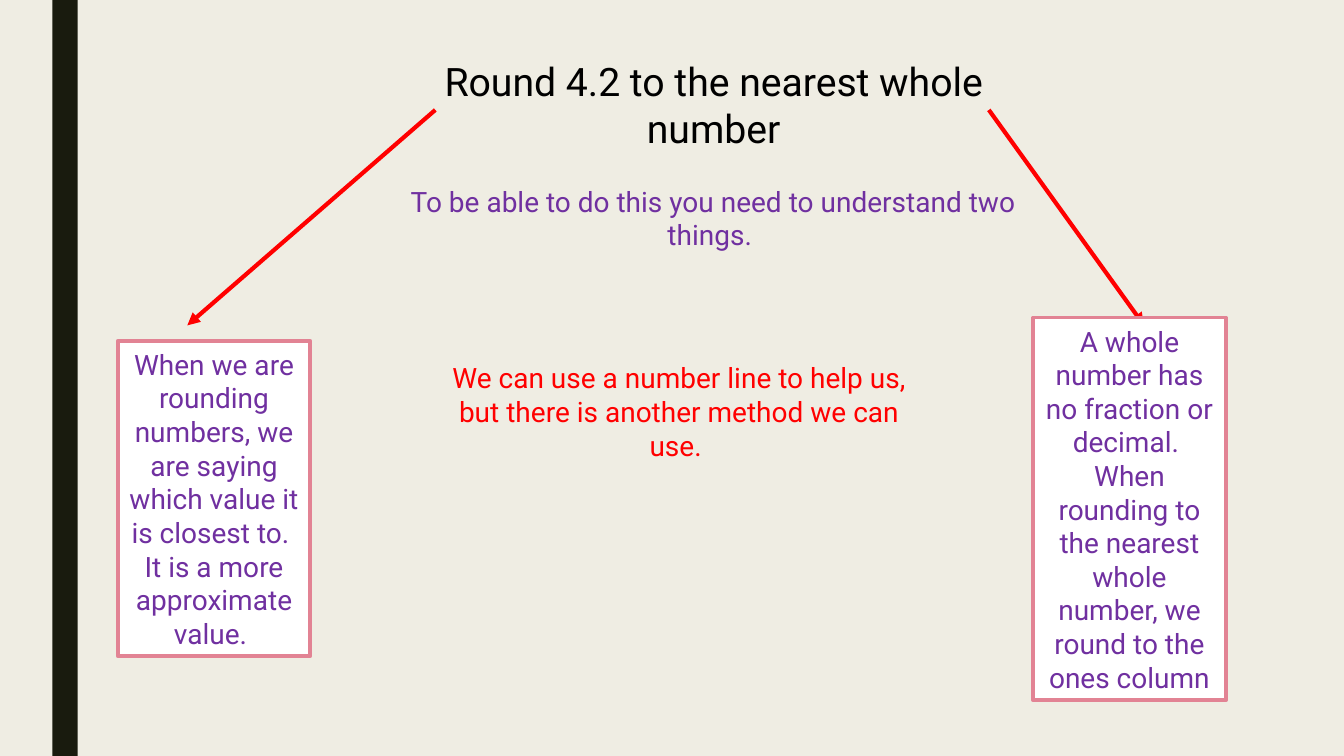
from lxml.etree import SubElement
from pptx import Presentation
from pptx.dml.color import RGBColor
from pptx.enum.shapes import MSO_CONNECTOR as Connector, MSO_SHAPE as Shape
from pptx.enum.text import MSO_ANCHOR as Anchor, PP_ALIGN as Align
from pptx.oxml.ns import qn
from pptx.util import Cm, Pt

CREAM = RGBColor(0xEF, 0xED, 0xE3)
DARK_OLIVE = RGBColor(0x19, 0x1B, 0x0E)
BLACK = RGBColor(0, 0, 0)
WHITE = RGBColor(0xFF, 0xFF, 0xFF)
PURPLE = RGBColor(0x70, 0x30, 0xA0)
RED = RGBColor(0xFF, 0, 0)
PINK = RGBColor(0xE2, 0x83, 0x94)


def write_text(shape, *paragraphs, size=20, color=PURPLE, anchor=Anchor.TOP):
    frame = shape.text_frame
    frame.word_wrap = True
    frame.vertical_anchor = anchor
    frame.text = "\n".join(paragraphs)
    for paragraph in frame.paragraphs:
        paragraph.alignment = Align.CENTER
        paragraph.font.name = "Roboto"
        paragraph.font.size = Pt(size)
        paragraph.font.color.rgb = color


def add_rectangle(left, top, width, height, fill):
    shape = slide.shapes.add_shape(
        Shape.RECTANGLE, Cm(left), Cm(top), Cm(width), Cm(height))
    shape.shadow.inherit = False
    shape.fill.solid()
    shape.fill.fore_color.rgb = fill
    shape.line.fill.background()
    return shape


presentation = Presentation()
presentation.slide_width = Cm(33.87)
presentation.slide_height = Cm(19.05)
slide = presentation.slides.add_slide(presentation.slide_layouts[6])
slide.background.fill.solid()
slide.background.fill.fore_color.rgb = CREAM

add_rectangle(1.32, 0, 0.64, 19.05, DARK_OLIVE)

title = slide.shapes.add_textbox(Cm(9.35), Cm(1.32), Cm(17.27), Cm(1.45))
write_text(title, "Round 4.2 to the nearest whole number", size=28, color=BLACK)

subtitle = slide.shapes.add_textbox(Cm(9.25), Cm(4.52), Cm(17.45), Cm(1.12))
write_text(subtitle, "To be able to do this you need to understand two things. ")

# Each explanation: arrow start and end x, then box left, top, height and text
explanations = [
    (10.97, 4.72, 2.97, 8.59, 7.95,
     ["When we are rounding numbers, we are saying which value it is closest to. ",
      "It is a more approximate value. "]),
    (24.92, 28.83, 26.04, 8.0, 9.65,
     ["A whole number has no fraction or decimal. ",
      "When rounding to the nearest whole number, we round to the ones column"]),
]
for start_x, end_x, left, top, height, paragraphs in explanations:
    arrow = slide.shapes.add_connector(
        Connector.STRAIGHT, Cm(start_x), Cm(2.77), Cm(end_x), Cm(8.2))
    arrow.line.color.rgb = RED
    arrow.line.width = Pt(3)
    SubElement(arrow.line._get_or_add_ln(), qn("a:tailEnd"), type="triangle")
    SubElement(arrow._element.spPr, qn("a:effectLst"))

    box = add_rectangle(left, top, 4.85, height, WHITE)
    box.line.color.rgb = PINK
    box.line.width = Pt(2.75)
    write_text(box, *paragraphs, anchor=Anchor.MIDDLE)

hint = slide.shapes.add_textbox(Cm(10.97), Cm(8.97), Cm(12.29), Cm(2.82))
write_text(hint, "We can use a number line to help us, but there is another "
                 "method we can use. ", color=RED)

presentation.save("out.pptx")
